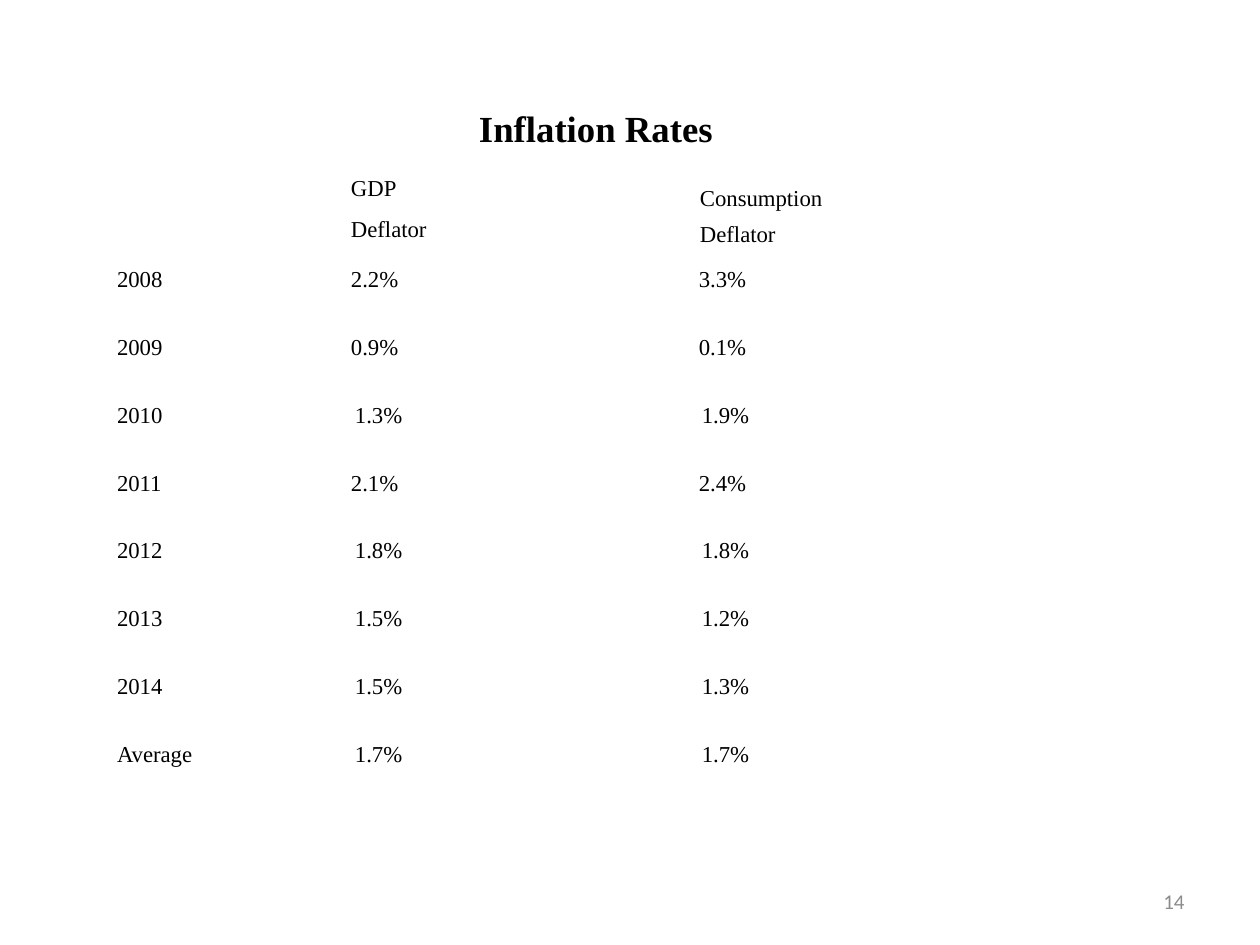
from pptx import Presentation
from pptx.dml.color import RGBColor
from pptx.enum.text import MSO_ANCHOR as Anchor, PP_ALIGN as Align
from pptx.util import Pt

TITLE = "Inflation Rates"
PAGE_NUMBER = "14"
HEADERS = ["GDP\nDeflator", "Consumption Deflator"]
RATES = [
    ("2008", "2.2%", "3.3%"),
    ("2009", "0.9%", "0.1%"),
    ("2010", "1.3%", "1.9%"),
    ("2011", "2.1%", "2.4%"),
    ("2012", "1.8%", "1.8%"),
    ("2013", "1.5%", "1.2%"),
    ("2014", "1.5%", "1.3%"),
    ("Average", "1.7%", "1.7%"),
]
COLORS = {"ink": "000000", "muted": "8C8C8C"}
SERIF, SANS = "Times New Roman", "Calibri"
SCALE = 914400 // 126
COLUMN_WIDTHS = [169, 287, 292]
HEADER_HEIGHT, ROW_HEIGHT, LAST_HEIGHT = 91, 68, 52
YEAR_INDENT, GDP_INDENT, CONSUMPTION_INDENT = 4, 69, 131
CENTER_INDENT = 15


def px(length):
    return length * SCALE


def write(frame, text, size=13, font=SERIF, color="ink", bold=False,
          align=Align.LEFT, indent=0, line=None, gap=0):
    for index, words in enumerate(text.split("\n")):
        para = frame.add_paragraph() if index else frame.paragraphs[0]
        para.alignment = align
        para.line_spacing = line
        para.space_before = Pt(gap if index else 0)
        if indent:
            para._p.get_or_add_pPr().set("marL", str(px(indent)))
        span = para.add_run()
        span.text = words
        span.font.size = Pt(size)
        span.font.name = font
        span.font.bold = bold
        span.font.color.rgb = RGBColor.from_string(COLORS[color])


def add_box(page, left, top, width, height):
    box = page.shapes.add_textbox(px(left), px(top), px(width), px(height))
    box.text_frame.word_wrap = True
    return box.text_frame


def clear_margins(area):
    area.margin_left = area.margin_top = area.margin_right = area.margin_bottom = 0


def add_rates(page):
    heights = [HEADER_HEIGHT] + [ROW_HEIGHT] * (len(RATES) - 1) + [LAST_HEIGHT]
    table = page.shapes.add_table(
        len(heights), len(COLUMN_WIDTHS), px(113), px(176),
        px(sum(COLUMN_WIDTHS)), px(sum(heights))).table
    table.first_row = table.horz_banding = False
    for column, width in zip(table.columns, COLUMN_WIDTHS):
        column.width = px(width)
    for row, height in zip(table.rows, heights):
        row.height = px(height)
    for cell in table.iter_cells():
        clear_margins(cell)
        cell.fill.background()

    write(table.cell(0, 1).text_frame, HEADERS[0], indent=GDP_INDENT, gap=9.6)
    write(table.cell(0, 2).text_frame, HEADERS[1], indent=CONSUMPTION_INDENT, line=1.42)
    for index, (year, gdp, consumption) in enumerate(RATES, 1):
        frames = [table.cell(index, column).text_frame for column in range(3)]
        write(frames[0], year, indent=YEAR_INDENT)
        write(frames[1], gdp, indent=GDP_INDENT + 4 * gdp.startswith("1"))
        write(frames[2], consumption, align=Align.CENTER,
              indent=CENTER_INDENT + 6 * consumption.startswith("1"))


def main():
    deck = Presentation()
    deck.slide_width, deck.slide_height = px(1260), px(945)
    page = deck.slides.add_slide(deck.slide_layouts[6])

    title = add_box(page, 478, 106, 282, 40)
    clear_margins(title)
    write(title, TITLE, size=21, bold=True, indent=1)
    add_rates(page)
    number = add_box(page, 903, 876, 294, 50)
    number.vertical_anchor = Anchor.MIDDLE
    write(number, PAGE_NUMBER, size=12, font=SANS, color="muted", align=Align.RIGHT)

    deck.save("out.pptx")


if __name__ == "__main__":
    main()
